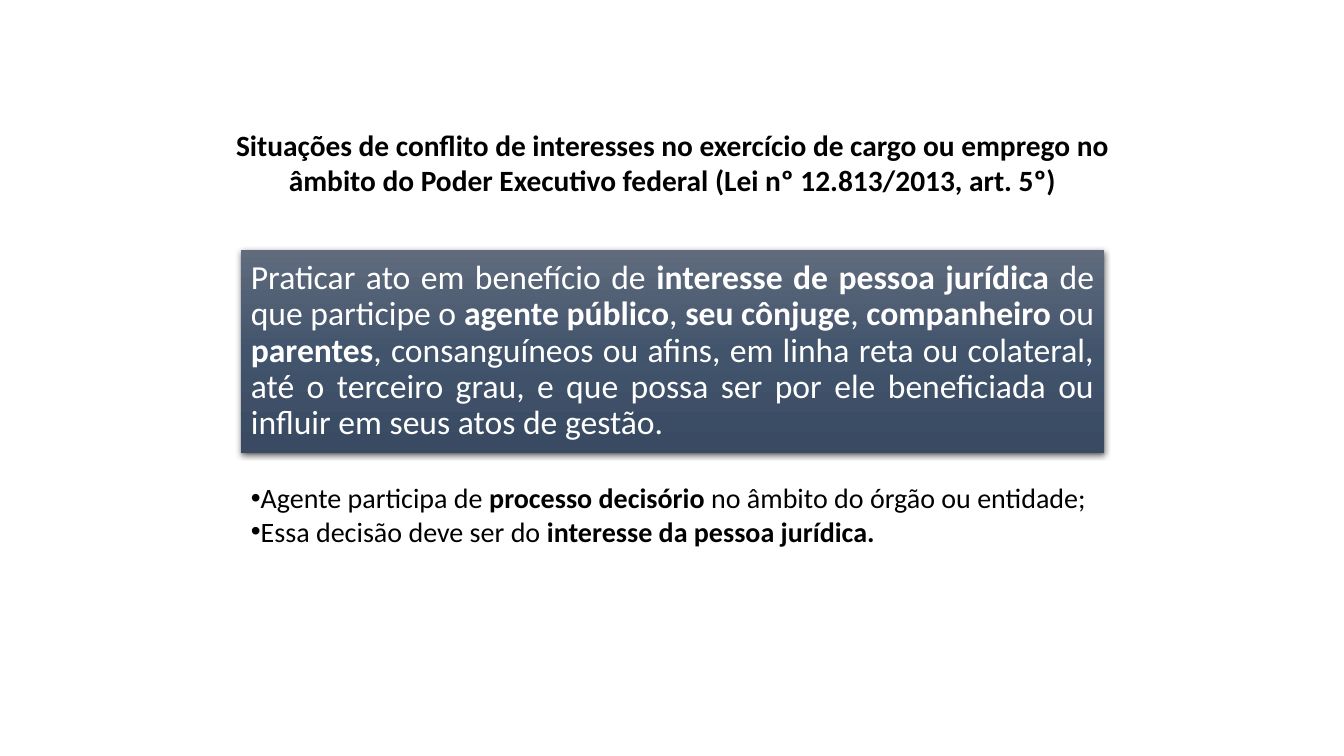
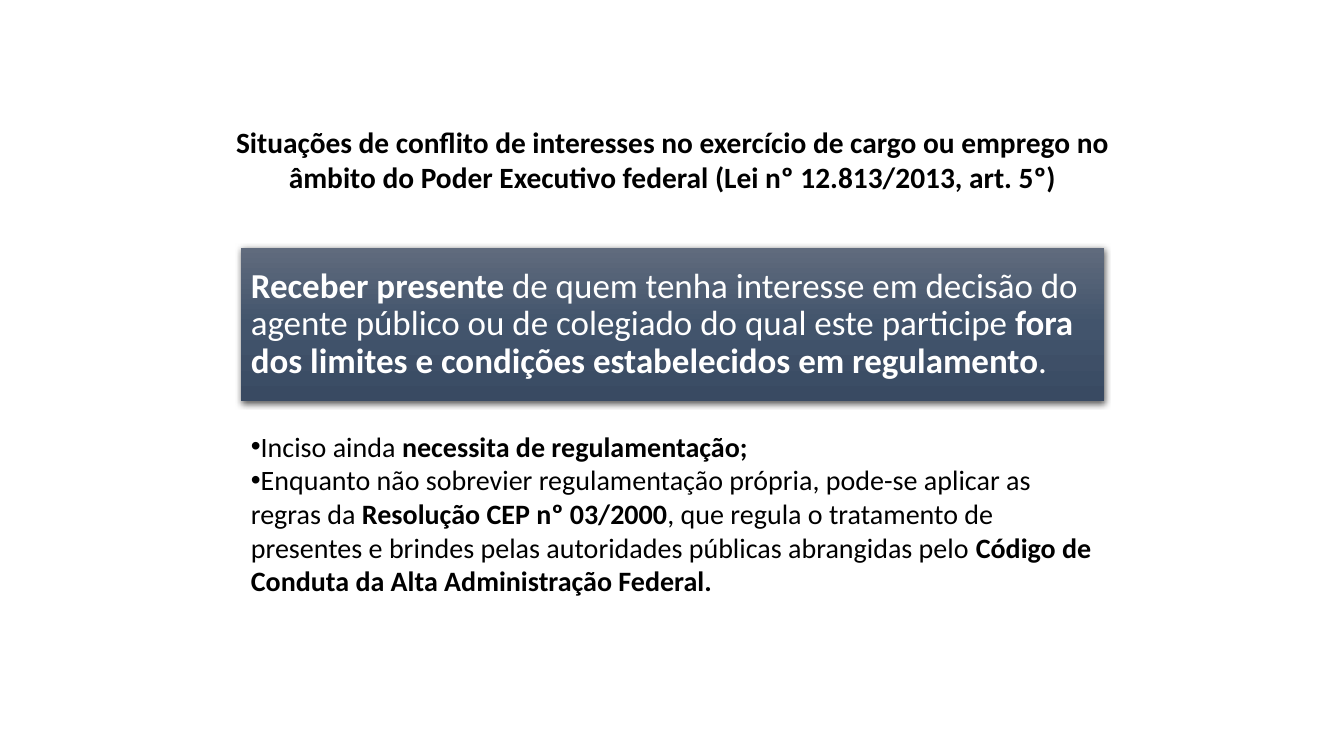
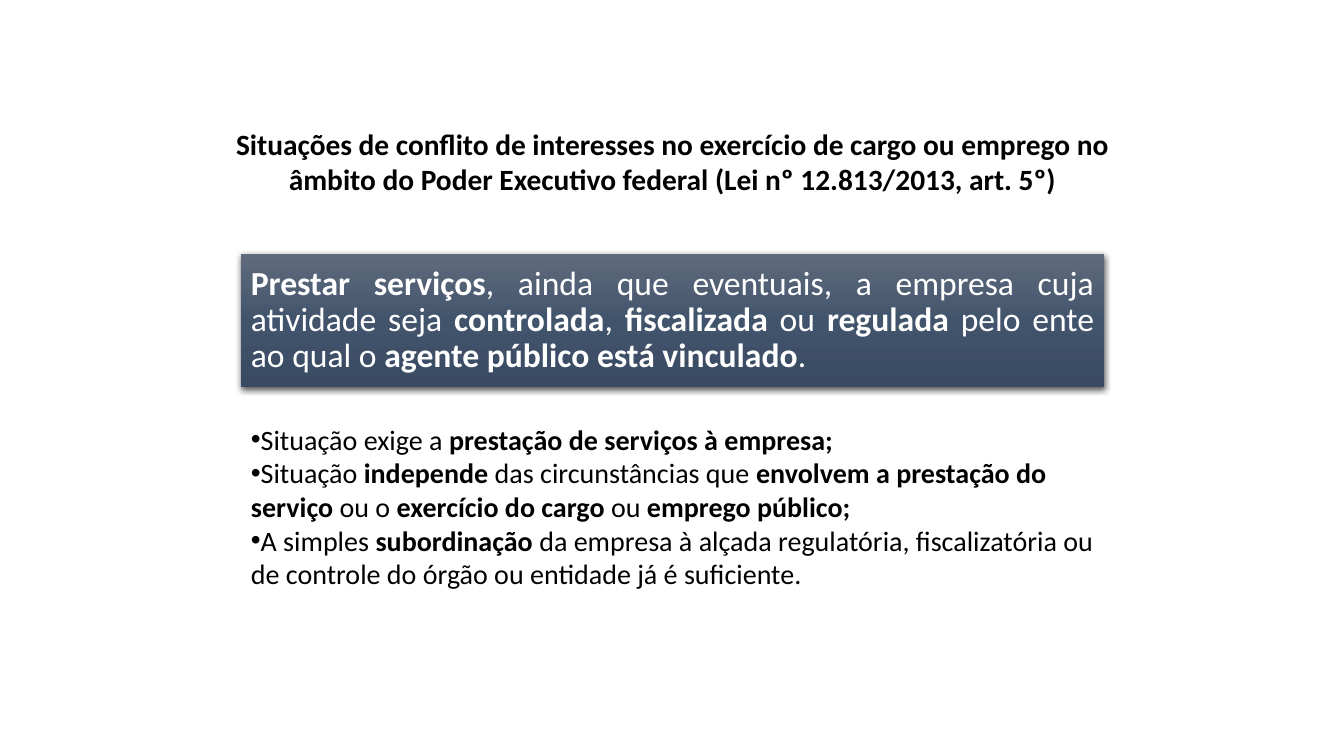
from dataclasses import dataclass
from copy import deepcopy

from pptx import Presentation
from pptx.dml.color import RGBColor
from pptx.enum.shapes import MSO_SHAPE
from pptx.enum.text import MSO_ANCHOR, MSO_AUTO_SIZE, PP_ALIGN
from pptx.oxml import parse_xml
from pptx.oxml.ns import nsdecls, qn
from pptx.util import Inches, Pt

RECTANGLE = MSO_SHAPE.RECTANGLE
MIDDLE = MSO_ANCHOR.MIDDLE
NO_FIT, GROW = MSO_AUTO_SIZE.NONE, MSO_AUTO_SIZE.SHAPE_TO_FIT_TEXT
LEFT, CENTER, JUSTIFY = PP_ALIGN.LEFT, PP_ALIGN.CENTER, PP_ALIGN.JUSTIFY


@dataclass(frozen=True)
class Theme:
    font: str = "Calibri"
    ink: str = "000000"
    light: str = "FFFFFF"
    panel: tuple = ((0, "606B7D"), (0.5, "42546C"), (1, "394A62"))
    title_size: int = 21
    bullet_size: int = 20


THEME = Theme()

# Content: ** switches bold on and off; tops and heights are in inches
TITLE = ("Situações de conflito de interesses no exercício de cargo ou emprego no "
         "âmbito do Poder Executivo federal (Lei nº 12.813/2013, art. 5º)")

SLIDES = [
    {
        "title_top": 1.27, "panel_top": 2.48, "panel_height": 2.01,
        "bullets_top": 4.72, "bullets_height": 1.11,
        "size": 24, "align": JUSTIFY,
        "rule": "Praticar ato em benefício de **interesse de pessoa jurídica** de que "
                "participe o **agente público**, **seu cônjuge**, **companheiro** ou "
                "**parentes**, consanguíneos ou afins, em linha reta ou colateral, até o "
                "terceiro grau, e que possa ser por ele beneficiada ou influir em seus "
                "atos de gestão.",
        "bullets": [
            "Agente participa de **processo decisório** no âmbito do órgão ou entidade;",
            "Essa decisão deve ser do **interesse da pessoa jurídica.**",
        ],
    },
    {
        "title_top": 1.24, "panel_top": 2.46, "panel_height": 1.52,
        "bullets_top": 4.21, "bullets_height": 1.78,
        "size": 25, "align": LEFT,
        "rule": "**Receber presente** de quem tenha interesse em decisão do agente público "
                "ou de colegiado do qual este participe **fora dos limites e condições "
                "estabelecidos em regulamento**.",
        "bullets": [
            "Inciso ainda **necessita de regulamentação;**",
            "Enquanto não sobrevier regulamentação própria, pode-se aplicar as regras da "
            "**Resolução CEP nº 03/2000**, que regula o tratamento de presentes e brindes "
            "pelas autoridades públicas abrangidas pelo **Código de Conduta da Alta "
            "Administração Federal.**",
        ],
    },
    {
        "title_top": 1.26, "panel_top": 2.52, "panel_height": 1.32,
        "bullets_top": 4.14, "bullets_height": 1.78,
        "size": 24, "align": JUSTIFY,
        "rule": "**Prestar serviços**, ainda que eventuais, a empresa cuja atividade seja "
                "**controlada**, **fiscalizada** ou **regulada** pelo ente ao qual o "
                "**agente público está vinculado**.",
        "bullets": [
            "Situação exige a **prestação de serviços à empresa;**",
            "Situação **independe **das circunstâncias que **envolvem a prestação do "
            "serviço **ou o **exercício do cargo **ou **emprego público;**",
            "A simples **subordinação** da empresa à alçada regulatória, fiscalizatória ou "
            "de controle do órgão ou entidade já é suficiente.",
        ],
    },
]

# Shared geometry
TITLE_LEFT, TITLE_WIDTH, TITLE_HEIGHT = Inches(2.24), Inches(8.86), Inches(0.68)
BODY_LEFT, BODY_WIDTH = Inches(2.39), Inches(8.56)


def set_insets(frame, side, end):
    frame.margin_left = frame.margin_right = Inches(side)
    frame.margin_top = frame.margin_bottom = Inches(end)


def write_spans(paragraph, text, size, color):
    """Add the text as runs, bold between ** marks."""
    for index, part in enumerate(text.split("**")):
        if part:
            span = paragraph.add_run()
            span.text = part
            span.font.name = THEME.font
            span.font.size = Pt(size)
            span.font.bold = index % 2 == 1
            span.font.color.rgb = RGBColor.from_string(color)


def add_title(page, top):
    title = page.shapes.title
    title.left, title.top = TITLE_LEFT, Inches(top)
    title.width, title.height = TITLE_WIDTH, TITLE_HEIGHT
    frame = title.text_frame
    frame.word_wrap, frame.auto_size = True, NO_FIT
    frame.vertical_anchor = MIDDLE
    set_insets(frame, 0.07, 0.04)
    paragraph = frame.paragraphs[0]
    paragraph.alignment = CENTER
    write_spans(paragraph, f"**{TITLE}**", THEME.title_size, THEME.ink)


def style_panel(panel):
    """Vertical gradient, no outline and a soft shadow below."""
    panel.line.fill.background()
    panel.fill.gradient()
    panel.fill.gradient_angle = 270
    properties = panel._element.spPr
    stop_list = properties.find(qn("a:gradFill")).find(qn("a:gsLst"))
    stop_list.append(deepcopy(stop_list[-1]))
    for stop, (position, color) in zip(panel.fill.gradient_stops, THEME.panel):
        stop.position = position
        stop.color.rgb = RGBColor.from_string(color)
    panel.shadow.inherit = False
    properties.find(qn("a:effectLst")).append(parse_xml(
        f'<a:outerShdw {nsdecls("a")} blurRad="{Pt(4.5)}" dist="{Pt(1.5)}" '
        f'dir="5400000" algn="ctr" rotWithShape="0"><a:srgbClr val="{THEME.ink}">'
        '<a:alpha val="63000"/></a:srgbClr></a:outerShdw>'))


def add_panel(page, content):
    panel = page.shapes.add_shape(RECTANGLE, BODY_LEFT, Inches(content["panel_top"]),
                                  BODY_WIDTH, Inches(content["panel_height"]))
    style_panel(panel)
    frame = panel.text_frame
    frame.word_wrap = True
    frame.vertical_anchor = MIDDLE
    set_insets(frame, 0.1, 0.1)
    paragraph = frame.paragraphs[0]
    paragraph.alignment = content["align"]
    paragraph.line_spacing = 0.9
    write_spans(paragraph, content["rule"], content["size"], THEME.light)


def add_bullets(page, content):
    box = page.shapes.add_textbox(BODY_LEFT, Inches(content["bullets_top"]),
                                  BODY_WIDTH, Inches(content["bullets_height"]))
    frame = box.text_frame
    frame.word_wrap, frame.auto_size = True, GROW
    for index, text in enumerate(content["bullets"]):
        paragraph = frame.add_paragraph() if index else frame.paragraphs[0]
        properties = paragraph._p.get_or_add_pPr()
        properties.set("marL", "0")
        properties.set("indent", str(Inches(-0.31)))
        properties.append(parse_xml(f'<a:buFont {nsdecls("a")} typeface="Arial"/>'))
        properties.append(parse_xml(f'<a:buChar {nsdecls("a")} char="•"/>'))
        write_spans(paragraph, text, THEME.bullet_size, THEME.ink)


def main():
    deck = Presentation()
    deck.slide_width, deck.slide_height = Inches(13.33), Inches(7.5)
    title_only = deck.slide_layouts[5]
    for content in SLIDES:
        page = deck.slides.add_slide(title_only)
        add_title(page, content["title_top"])
        add_panel(page, content)
        add_bullets(page, content)
    deck.save("out.pptx")


if __name__ == "__main__":
    main()
